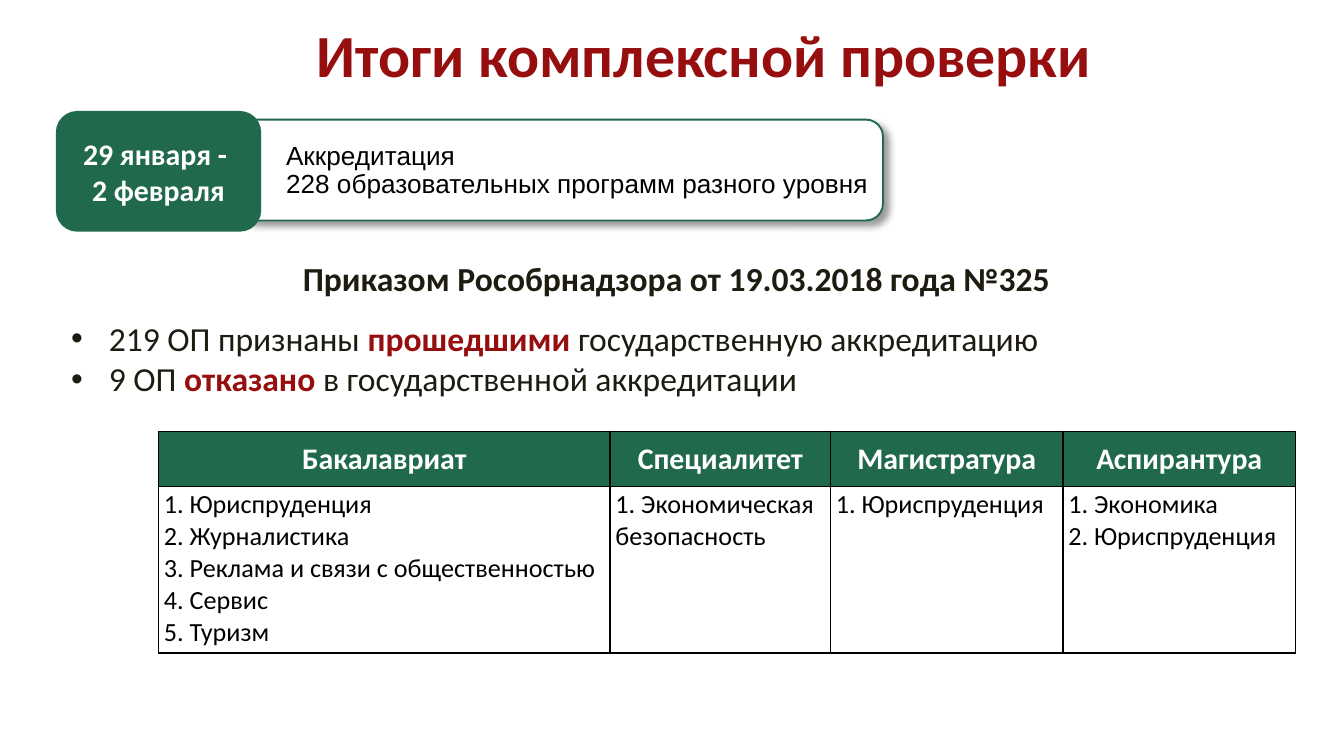
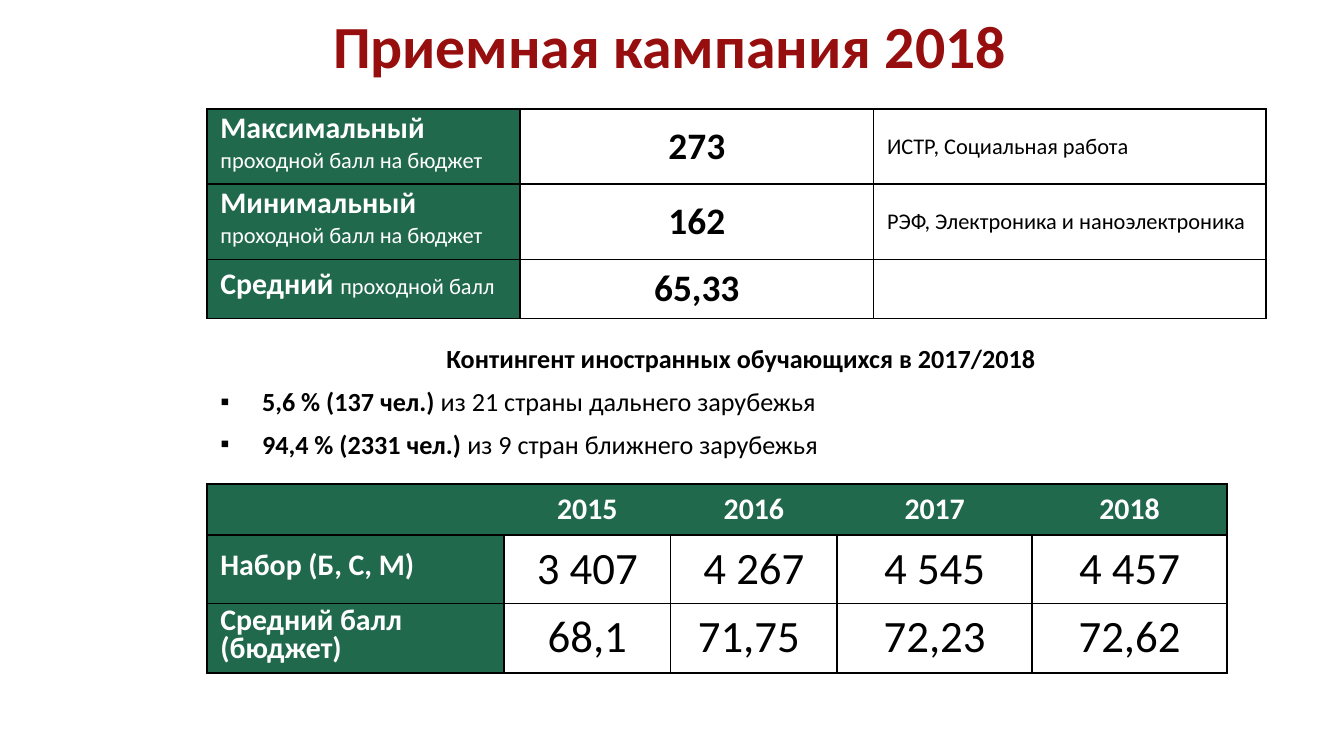
import pptx
import pptx.util
import pptx.oxml
import pptx.oxml.ns
import pptx.dml.color
import pptx.enum.shapes
import pptx.enum.text
from dataclasses import dataclass, replace
from lxml import etree

COLORS = {"green": "20694C", "red": "960E0E", "ink": "1E1C11",
          "black": "000000", "white": "FFFFFF"}
CELL = 0.1
COLUMNS, ROWS = 100, 56.25
ALIGN = pptx.enum.text.PP_ALIGN
ANCHOR = pptx.enum.text.MSO_ANCHOR


@dataclass(frozen=True)
class Look:
    """Describe how a span of text and its paragraph appear."""
    size: float = 14
    color: str = "black"
    bold: bool = False
    align: int = ALIGN.LEFT
    spacing: object = None
    font: str = "Calibri"


@dataclass(frozen=True)
class CellLook:
    """Describe a table cell: text, fill and anchor."""
    text: Look
    fill: str = "white"
    anchor: int = ANCHOR.MIDDLE


HEAD = Look(16, "white", True, ALIGN.CENTER)
LABEL = Look(16, "white", True, spacing=pptx.util.Pt(15))
NOTE = Look(12)
GREEN_HEAD = CellLook(HEAD, "green")
GREEN_LABEL = CellLook(LABEL, "green")


def grid(count):
    """Turn grid cells into a length."""
    return pptx.util.Inches(count * CELL)


def place(shape, box):
    """Move a shape to a box of the grid."""
    shape.left, shape.top, shape.width, shape.height = map(grid, box)


def rgb(name):
    """Look up a colour."""
    return pptx.dml.color.RGBColor.from_string(COLORS[name])


def add_span(para, text, look):
    """Add one run in the given look."""
    span = para.add_run()
    span.text = text
    span.font.name, span.font.size = look.font, pptx.util.Pt(look.size)
    span.font.bold, span.font.color.rgb = look.bold, rgb(look.color)


def write(frame, paragraphs):
    """Fill a frame with paragraphs, each a list of (text, look) spans."""
    frame.word_wrap = True
    for index, spans in enumerate(paragraphs):
        para = frame.add_paragraph() if index else frame.paragraphs[0]
        para.alignment = spans[0][1].align
        para.space_before = pptx.util.Pt(0)
        if spans[0][1].spacing:
            para.line_spacing = spans[0][1].spacing
        for text, look in spans:
            add_span(para, text, look)


def set_bullet(para, mark, indent):
    """Give a paragraph a bullet mark, or none."""
    props = para._p.get_or_add_pPr()
    props.set("marL", str(grid(indent)))
    props.set("indent", str(-grid(indent)))
    if mark:
        etree.SubElement(props, pptx.oxml.ns.qn("a:buChar")).set("char", mark)
    else:
        etree.SubElement(props, pptx.oxml.ns.qn("a:buNone"))


def add_page(deck, title, box):
    """Add a page with the shared title style."""
    page = deck.slides.add_slide(deck.slide_layouts[1])
    place(page.shapes.title, box)
    frame = page.shapes.title.text_frame
    write(frame, [[(title, Look(32, "red", True, ALIGN.CENTER))]])
    frame.vertical_anchor = ANCHOR.MIDDLE
    frame.auto_size = pptx.enum.text.MSO_AUTO_SIZE.NONE
    return page


def add_list(page, box, heading, items, mark, indent, gaps):
    """Fill the body placeholder with a heading and bulleted items."""
    body = page.placeholders[1]
    place(body, box)
    frame = body.text_frame
    write(frame, [heading, *items])
    frame.auto_size = pptx.enum.text.MSO_AUTO_SIZE.NONE
    set_bullet(frame.paragraphs[0], None, 0)
    for para, gap in zip(frame.paragraphs[1:], gaps):
        set_bullet(para, mark, indent)
        para.space_before = pptx.util.Pt(gap)


def add_rounded(shapes, box, fill, weight):
    """Add a rounded box with a green outline."""
    shape = shapes.add_shape(pptx.enum.shapes.MSO_SHAPE.ROUNDED_RECTANGLE,
                             *map(grid, box))
    shape.shadow.inherit = False
    shape.fill.solid()
    shape.fill.fore_color.rgb = rgb(fill)
    shape.line.color.rgb = rgb("green")
    shape.line.width = pptx.util.Pt(weight)
    return shape


def cast_shadow(shape):
    """Give a shape a soft shadow to the lower right."""
    effects = shape._element.spPr.find(pptx.oxml.ns.qn("a:effectLst"))
    effects.append(pptx.oxml.parse_xml(
        f'<a:outerShdw {pptx.oxml.ns.nsdecls("a")} blurRad="50800" dist="38100" '
        f'dir="2700000" algn="tl" rotWithShape="0"><a:srgbClr val="{COLORS["black"]}">'
        '<a:alpha val="40000"/></a:srgbClr></a:outerShdw>'))


def add_event(page, box, dates, lines):
    """Draw a date badge overlapping a described band."""
    left, top, width, height = box
    badge_width = 15
    group = page.shapes.add_group_shape()
    band = add_rounded(group.shapes, (left + 13.4, top + 0.5, width - 14.2, 7.5),
                       "white", 1)
    cast_shadow(band)
    text_box = group.shapes.add_textbox(
        *map(grid, (left + 16, top - 1.5, width - 16, 11.7)))
    look = Look(14, font="Arial", spacing=0.9)
    write(text_box.text_frame, [[(line, look)] for line in lines])
    text_box.text_frame.vertical_anchor = ANCHOR.MIDDLE
    badge = add_rounded(page.shapes, (left, top, badge_width, height), "green", 2)
    write(badge.text_frame, [[(line, HEAD)] for line in dates])
    badge.text_frame.vertical_anchor = ANCHOR.MIDDLE


def set_borders(cell, hidden):
    """Draw the four borders of a cell, leaving hidden sides clear."""
    props = cell._tc.get_or_add_tcPr()
    for index, side in enumerate("LRTB"):
        paint = ("<a:noFill/>" if side in hidden else
                 f'<a:solidFill><a:srgbClr val="{COLORS["black"]}"/></a:solidFill>')
        props.insert(index, pptx.oxml.parse_xml(
            f'<a:ln{side} {pptx.oxml.ns.nsdecls("a")} w="12700">{paint}</a:ln{side}>'))


def add_grid_table(page, corner, widths, heights, cells, look_at, margins=(1, 0.5),
                   open_head=False):
    """Add a bordered table; look_at gives the look of each row and column."""
    frame = page.shapes.add_table(
        len(heights), len(widths), *map(grid, (*corner, sum(widths), sum(heights))))
    table = frame.table
    table.first_row = table.horz_banding = False
    for column, width in zip(table.columns, widths):
        column.width = grid(width)
    for row, height in zip(table.rows, heights):
        row.height = grid(height)
    last = len(widths) - 1
    for y, row in enumerate(cells):
        for x, paragraphs in enumerate(row):
            cell, look = table.cell(y, x), look_at(y, x)
            cell.margin_left = cell.margin_right = grid(margins[0])
            cell.margin_top = cell.margin_bottom = grid(margins[1])
            cell.vertical_anchor = look.anchor
            cell.fill.solid()
            cell.fill.fore_color.rgb = rgb(look.fill)
            if isinstance(paragraphs, str):
                paragraphs = [[(line, look.text)] for line in paragraphs.split("\n")]
            write(cell.text_frame, paragraphs)
            hidden = ""
            if open_head and y == 0:
                hidden = ("L" if x else "") + ("R" if x < last else "")
            set_borders(cell, hidden)


def build_inspection(deck):
    """Build the page on the results of the inspection."""
    page = add_page(deck, "Итоги комплексной проверки", (8.3, 0.5, 88.2, 7))
    plain = Look(18, "ink", align=ALIGN.JUSTIFY)
    strong = replace(plain, color="red", bold=True)
    add_list(page, (4.3, 18.7, 92.1, 11.9),
             [("Приказом Рособрнадзора от 19.03.2018 года №325",
               Look(18, "ink", True, ALIGN.CENTER))],
             [[("219 ОП признаны ", plain), ("прошедшими ", strong),
               ("государственную аккредитацию", plain)],
              [("9 ОП ", plain), ("отказано ", strong),
               ("в государственной аккредитации", plain)]],
             "•", 2.8, (10.5, 0))
    add_event(page, (4.3, 8.4, 62.2, 8.7), ("29 января - ", "2 февраля"),
              ("Аккредитация", "228 образовательных программ разного уровня"))
    listing = CellLook(Look(14), anchor=ANCHOR.TOP)
    add_grid_table(
        page, (11.8, 32.1), (33.6, 16.4, 17.3, 17.3), (4.1, 12.4),
        [("Бакалавриат", "Специалитет", "Магистратура", "Аспирантура"),
         ("1. Юриспруденция\n2. Журналистика\n3. Реклама и связи с общественностью\n"
          "4. Сервис\n5. Туризм", "1. Экономическая безопасность",
          "1. Юриспруденция", "1. Экономика\n2. Юриспруденция")],
        lambda y, x: listing if y else GREEN_HEAD, (0.4, 0.2))


def build_admission(deck):
    """Build the page on the admission campaign."""
    page = add_page(deck, "Приемная кампания 2018", (16.1, -1.4, 67.5, 9.4))
    left = 15.4
    plain, strong = Look(14), Look(14, bold=True)
    add_list(page, (left, 25, 79.5, 10.1),
             [("Контингент иностранных обучающихся в 2017/2018",
               replace(strong, align=ALIGN.CENTER))],
             [[("5,6 % (137 чел.) ", strong),
               ("из 21 страны дальнего зарубежья", plain)],
              [("94,4 % (2331 чел.) ", strong),
               ("из 9 стран ближнего зарубежья", plain)]],
             "▪", 3.1, (6, 6))
    figure = CellLook(Look(24, align=ALIGN.CENTER), anchor=ANCHOR.TOP)
    year = replace(GREEN_HEAD, anchor=ANCHOR.TOP)
    add_grid_table(
        page, (left, 36), (22.1, 12.4, 12.4, 14.5, 14.5), (2.7, 5.1, 4.7),
        [("", "2015", "2016", "2017", "2018"),
         ("Набор (Б, С, М)", "3 407", "4 267", "4 545", "4 457"),
         ("Средний балл (бюджет)", "68,1", "71,75 ", "72,23", "72,62")],
        lambda y, x: year if y == 0 else figure if x else GREEN_LABEL, open_head=True)
    small = replace(NOTE, color="white")
    scores = [("Максимальный ", "проходной балл на бюджет", "273",
               "ИСТР, Социальная работа"),
              ("Минимальный ", "проходной балл на бюджет", "162",
               "РЭФ, Электроника и наноэлектроника"),
              ("Средний ", "проходной балл", "65,33", "")]
    looks = (GREEN_LABEL, CellLook(Look(20, bold=True, align=ALIGN.CENTER)),
             CellLook(NOTE))
    add_grid_table(
        page, (left, 8.1), (23.3, 26.3, 29.2), (5.6, 5.6, 4.2),
        [([[(name, LABEL), (rest, small)]], score, place_name)
         for name, rest, score, place_name in scores],
        lambda y, x: looks[x])


def main():
    """Build and save the deck."""
    deck = pptx.Presentation()
    deck.slide_width, deck.slide_height = grid(COLUMNS), grid(ROWS)
    build_inspection(deck)
    build_admission(deck)
    deck.save("out.pptx")


if __name__ == "__main__":
    main()
